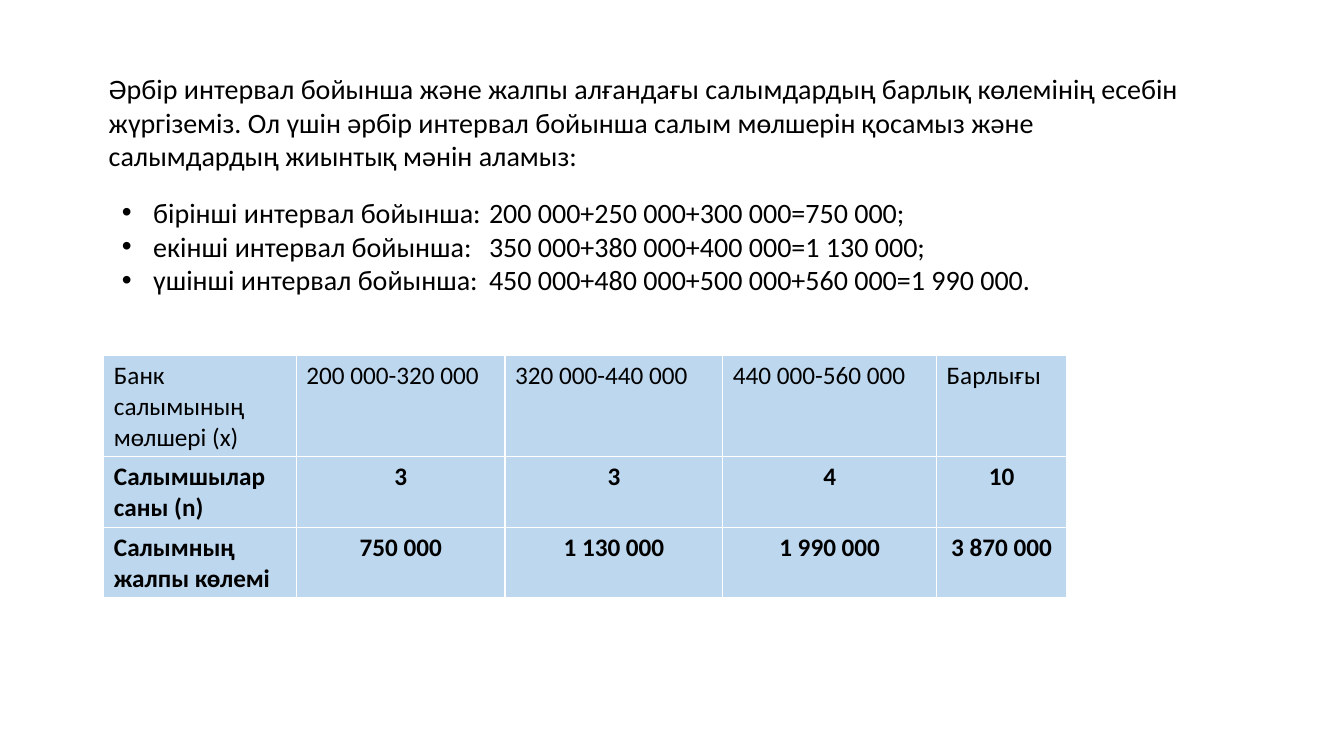
from lxml.etree import SubElement
from pptx import Presentation
from pptx.dml.color import RGBColor
from pptx.enum.text import MSO_AUTO_SIZE, PP_ALIGN
from pptx.oxml.ns import qn
from pptx.util import Inches, Pt

COLORS = {"text": "000000", "cell": "BDD7EE", "border": "FFFFFF"}
FONT = "Calibri"

INTRO = (
    "Әрбір интервал бойынша және жалпы алғандағы салымдардың барлық көлемінің есебін "
    "жүргіземіз. Ол үшін әрбір интервал бойынша салым мөлшерін қосамыз және "
    "салымдардың жиынтық мәнін аламыз:"
)
INTERVAL_SUMS = [
    "бірінші интервал бойынша:\t200 000+250 000+300 000=750 000;",
    "екінші интервал бойынша:\t350 000+380 000+400 000=1 130 000;",
    "үшінші интервал бойынша:\t450 000+480 000+500 000+560 000=1 990 000.",
]
DEPOSITS = [
    ["Банк салымының мөлшері (х)", "200 000-320 000", "320 000-440 000",
     "440 000-560 000", "Барлығы"],
    ["Салымшылар саны (n)", "3", "3", "4", "10"],
    ["Салымның жалпы көлемі", "750 000", "1 130 000", "1 990 000", "3 870 000"],
]
COLUMN_WIDTHS = [1.91, 2.07, 2.16, 2.12, 1.29]
ROW_HEIGHTS = [1.0, 0.7, 0.7]


def style_paragraph(para, size, bold=False):
    para.font.name = FONT
    para.font.size = Pt(size)
    para.font.bold = bold
    para.font.color.rgb = RGBColor.from_string(COLORS["text"])


def add_intro(page):
    box = page.shapes.add_textbox(Inches(0.98), Inches(0.66), Inches(10.92), Inches(1.11))
    box.text_frame.word_wrap = True
    box.text_frame.text = INTRO
    style_paragraph(box.text_frame.paragraphs[0], 20)


def add_bullet(para, indent, tab_stop):
    properties = para._p.get_or_add_pPr()
    properties.set("marL", str(Inches(indent)))
    properties.set("indent", str(-Inches(indent)))
    SubElement(properties, qn("a:buFont"), typeface="Arial")
    SubElement(properties, qn("a:buChar"), char="•")
    tabs = SubElement(properties, qn("a:tabLst"))
    SubElement(tabs, qn("a:tab"), pos=str(Inches(tab_stop)), algn="l")


def fill_list(body):
    body.left, body.top = Inches(1.11), Inches(1.89)
    body.width, body.height = Inches(11.05), Inches(1.11)
    frame = body.text_frame
    frame.auto_size = MSO_AUTO_SIZE.NONE
    frame.text = "\n".join(INTERVAL_SUMS)
    for para in frame.paragraphs:
        add_bullet(para, indent=0.31, tab_stop=3.64)
        para.space_before = Pt(0)
        style_paragraph(para, 20)


def add_borders(cell, bottom_width):
    properties = cell._tc.get_or_add_tcPr()
    widths = {"a:lnL": 1, "a:lnR": 1, "a:lnT": 1, "a:lnB": bottom_width}
    for position, (tag, width) in enumerate(widths.items()):
        line = SubElement(properties, qn(tag), w=str(Pt(width)))
        fill = SubElement(line, qn("a:solidFill"))
        SubElement(fill, qn("a:srgbClr"), val=COLORS["border"])
        properties.insert(position, line)


def add_deposit_table(page):
    frame = page.shapes.add_table(
        len(DEPOSITS), len(COLUMN_WIDTHS), Inches(1.03), Inches(3.53),
        Inches(sum(COLUMN_WIDTHS)), Inches(sum(ROW_HEIGHTS)))
    table = frame.table
    table.horz_banding = False
    for column, width in zip(table.columns, COLUMN_WIDTHS):
        column.width = Inches(width)
    for row, height in zip(table.rows, ROW_HEIGHTS):
        row.height = Inches(height)

    for row_index, values in enumerate(DEPOSITS):
        is_header = row_index == 0
        for column_index, value in enumerate(values):
            cell = table.cell(row_index, column_index)
            cell.text = value
            cell.fill.solid()
            cell.fill.fore_color.rgb = RGBColor.from_string(COLORS["cell"])
            add_borders(cell, bottom_width=1)
            para = cell.text_frame.paragraphs[0]
            is_number = not is_header and column_index > 0
            para.alignment = PP_ALIGN.CENTER if is_number else PP_ALIGN.LEFT
            style_paragraph(para, 18, bold=not is_header)


def main():
    deck = Presentation()
    deck.slide_width, deck.slide_height = Inches(13.33), Inches(7.5)
    page = deck.slides.add_slide(deck.slide_layouts[1])

    # The slide opens with running text, so it has no title
    title = page.shapes.title
    title._element.getparent().remove(title._element)

    # Text above, table below
    add_intro(page)
    fill_list(page.placeholders[1])
    add_deposit_table(page)

    deck.save("out.pptx")


if __name__ == "__main__":
    main()
